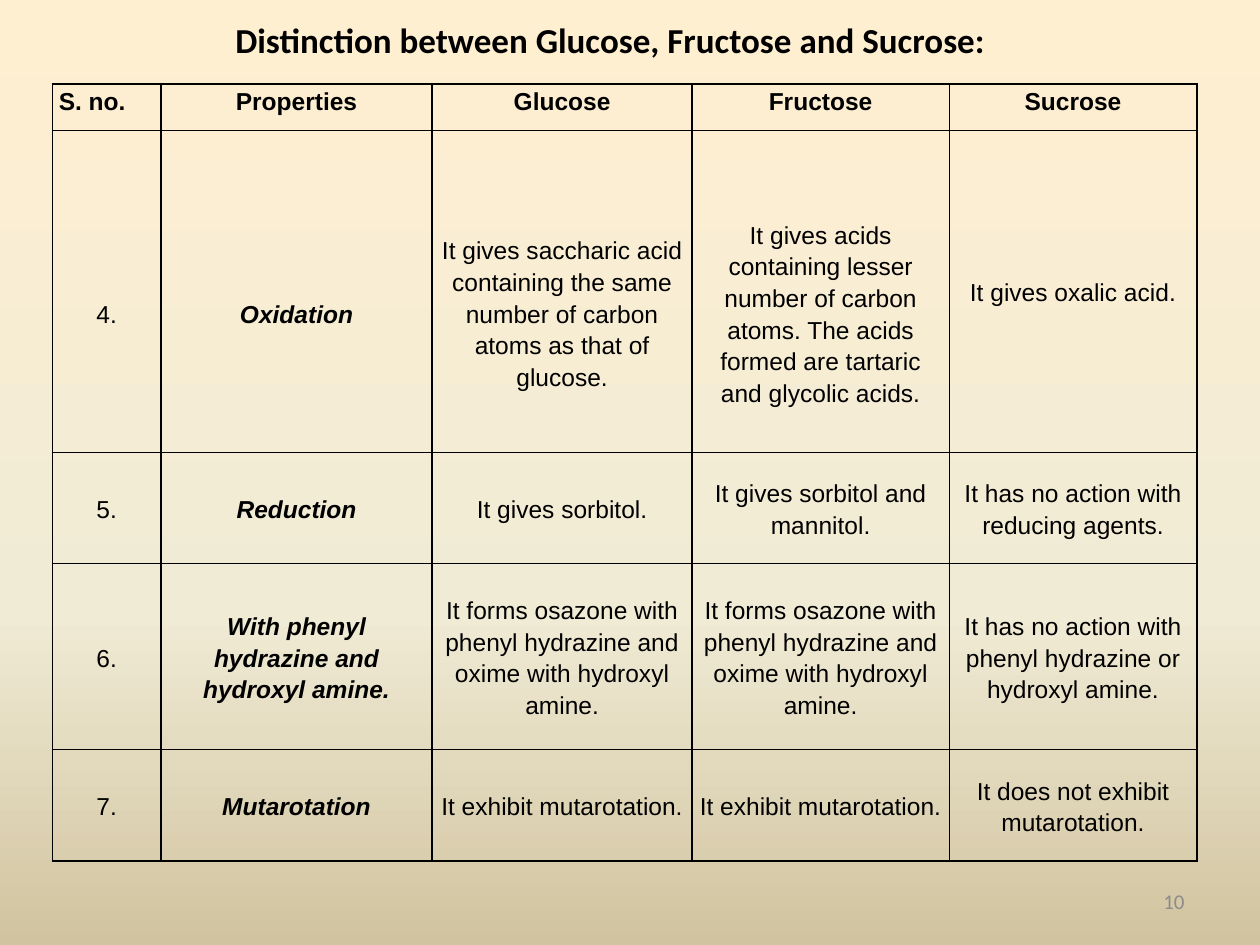
from copy import deepcopy

from lxml import etree
from pptx import Presentation
from pptx.dml.color import RGBColor
from pptx.enum.text import MSO_ANCHOR, PP_ALIGN
from pptx.oxml.ns import qn
from pptx.util import Pt

LEFT, CENTER, RIGHT = PP_ALIGN.LEFT, PP_ALIGN.CENTER, PP_ALIGN.RIGHT
TOP, MIDDLE = MSO_ANCHOR.TOP, MSO_ANCHOR.MIDDLE

COLORS = {
    "text": "000000",
    "border": "000000",
    "number": "8C8C8C",
    "sky": "FFEFD1",
    "cream": "F0EBD5",
    "sand": "D1C39F",
}
BACKGROUND = [(0, "sky"), (0.65, "cream"), (1, "sand")]

COLUMN_WIDTHS = [62, 155, 148.5, 147, 141.5]
ROW_HEIGHTS = [26.5, 24.5, 159.5, 63.5, 106.5, 63.5]
OSAZONE = "It forms osazone with phenyl hydrazine and oxime with hydroxyl amine."
MUTAROTATION = "It exhibit mutarotation."
# The second row is blank except for the cell that spans into the third
ROWS = [
    ["S. no.", "Properties", "Glucose", "Fructose", "Sucrose"],
    ["", "", "", "", "It gives oxalic acid."],
    ["4.", "Oxidation",
     "It gives saccharic acid containing the same number of carbon atoms "
     "as that of glucose.",
     "It gives acids containing lesser number of carbon atoms. "
     "The acids formed are tartaric and glycolic acids.", ""],
    ["5.", "Reduction", "It gives sorbitol.", "It gives sorbitol and mannitol.",
     "It has no action with reducing agents."],
    ["6.", "With phenyl hydrazine and hydroxyl amine.", OSAZONE, OSAZONE,
     "It has no action with phenyl hydrazine or hydroxyl amine."],
    ["7.", "Mutarotation", MUTAROTATION, MUTAROTATION,
     "It does not exhibit mutarotation."],
]


def write_text(frame, text, font="Arial", size=14, color="text", bold=False,
               italic=False, align=CENTER, spacing=1.0):
    paragraph = frame.paragraphs[0]
    paragraph.alignment = align
    paragraph.line_spacing = spacing
    run = paragraph.add_run()
    run.text = text
    run.font.name = font
    run.font.size = Pt(size)
    run.font.bold = bold
    run.font.italic = italic
    run.font.color.rgb = RGBColor.from_string(COLORS[color])


class SlideBuilder:
    def __init__(self, slide, border_width=1, cell_margin=3.6):
        self.slide = slide
        self.border_width = border_width
        self.cell_margin = cell_margin

    def background(self, stops, angle):
        fill = self.slide.background.fill
        fill.gradient()
        fill.gradient_angle = angle
        stop_list = self.slide.element.find(".//" + qn("a:gsLst"))
        stop_list.append(deepcopy(stop_list[-1]))
        for stop, (position, color) in zip(fill.gradient_stops, stops):
            stop.position = position
            stop.color.rgb = RGBColor.from_string(COLORS[color])

    def text(self, left, top, width, height, text, **text_format):
        shape = self.slide.shapes.add_textbox(
            Pt(left), Pt(top), Pt(width), Pt(height))
        frame = shape.text_frame
        frame.word_wrap = True
        frame.vertical_anchor = MIDDLE
        write_text(frame, text, **text_format)

    def table(self, left, top, widths, heights):
        table = self.slide.shapes.add_table(
            len(heights), len(widths), Pt(left), Pt(top),
            Pt(sum(widths)), Pt(sum(heights))).table
        table.first_row = table.horz_banding = False
        for column, width in zip(table.columns, widths):
            column.width = Pt(width)
        for row, height in zip(table.rows, heights):
            row.height = Pt(height)
        return table

    def cell(self, cell, text, open_sides="", anchor=MIDDLE, **text_format):
        cell.margin_left = cell.margin_right = Pt(self.cell_margin)
        cell.margin_top = cell.margin_bottom = 0
        cell.vertical_anchor = anchor
        self.borders(cell, open_sides)
        cell.fill.background()
        if text:
            write_text(cell.text_frame, text, spacing=1.15, **text_format)

    def borders(self, cell, open_sides):
        properties = cell._tc.get_or_add_tcPr()
        for side in "LRTB":
            line = etree.SubElement(properties, qn("a:ln" + side),
                                    w=str(Pt(self.border_width)))
            if side in open_sides:
                etree.SubElement(line, qn("a:noFill"))
            else:
                fill = etree.SubElement(line, qn("a:solidFill"))
                etree.SubElement(fill, qn("a:srgbClr"), val=COLORS["border"])


def main():
    presentation = Presentation()
    presentation.slide_width, presentation.slide_height = Pt(720), Pt(540)
    blank_layout = presentation.slide_layouts[6]
    builder = SlideBuilder(presentation.slides.add_slide(blank_layout))
    builder.background(BACKGROUND, angle=270)

    # Title
    builder.text(36, 0, 630, 45,
                 "Distinction between Glucose, Fructose and Sucrose: ",
                 font="Calibri", size=20, bold=True)

    # Comparison table
    table = builder.table(30, 48, COLUMN_WIDTHS, ROW_HEIGHTS)
    last_column = len(COLUMN_WIDTHS) - 1
    table.cell(1, last_column).merge(table.cell(2, last_column))
    open_sides = {1: "B", 2: "T"}
    for row, texts in enumerate(ROWS):
        header = row == 0
        for column, text in enumerate(texts):
            property_name = column == 1 and not header
            spanned = column == last_column and row == 1
            builder.cell(
                table.cell(row, column), text,
                open_sides="" if spanned else open_sides.get(row, ""),
                anchor=TOP if header else MIDDLE,
                bold=header or property_name, italic=property_name,
                align=LEFT if header and column == 0 else CENTER)

    # Slide number
    builder.text(516, 500.5, 168, 28.5, "10", font="Calibri", size=12,
                 color="number", align=RIGHT)

    presentation.save("out.pptx")


if __name__ == "__main__":
    main()
